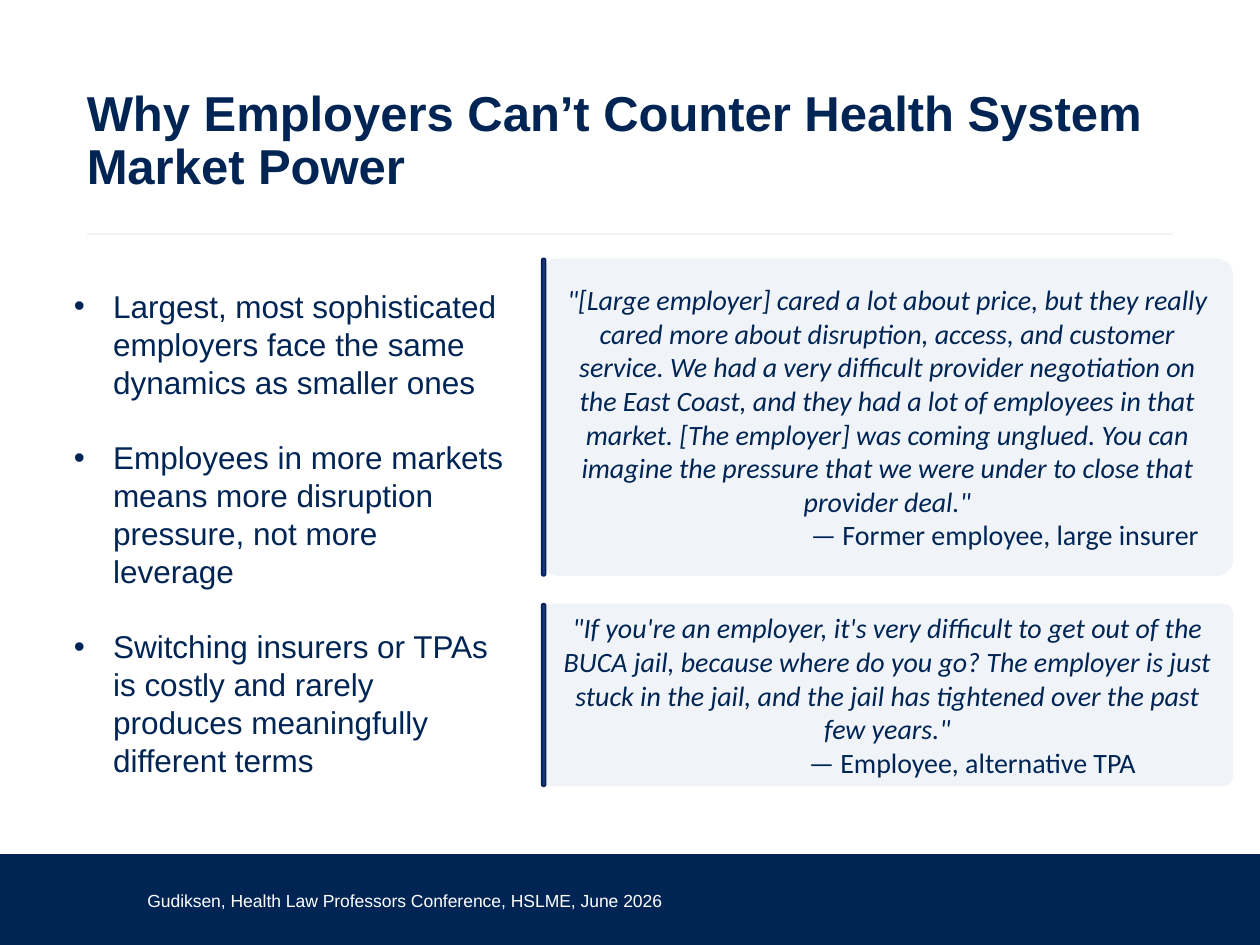
from lxml.etree import SubElement
from pptx import Presentation
from pptx.dml.color import RGBColor
from pptx.enum.shapes import MSO_CONNECTOR, MSO_SHAPE
from pptx.enum.text import MSO_ANCHOR
from pptx.oxml.ns import qn
from pptx.util import Cm, Pt

NAVY = "002554"
PALE = "F0F4F9"

TITLE = "Why Employers Can’t Counter Health System Market Power"
FOOTER = "Gudiksen, Health Law Professors Conference, HSLME, June 2026"
REASONS = [
    "Largest, most sophisticated employers face the same dynamics as smaller ones",
    "Employees in more markets means more disruption pressure, not more leverage",
    "Switching insurers or TPAs is costly and rarely produces meaningfully different terms",
]
QUOTES = [
    ('"[Large employer] cared a lot about price, but they really cared more about '
     "disruption, access, and customer service. We had a very difficult provider "
     "negotiation on the East Coast, and they had a lot of employees in that market. "
     "[The employer] was coming unglued. You can imagine the pressure that we were "
     'under to close that provider deal."',
     "— Former employee, large insurer", 5.21, 6.4),
    ('"If you\'re an employer, it\'s very difficult to get out of the BUCA jail, '
     "because where do you go? The employer is just stuck in the jail, and the jail "
     'has tightened over the past few years."',
     "— Employee, alternative TPA", 12.17, 3.68),
]


def color(hex_value):
    return RGBColor.from_string(hex_value)


def style(paragraph, size, hex_value=NAVY, name="Arial", bold=False, italic=False):
    font = paragraph.font
    font.name, font.size = name, Pt(size)
    font.bold, font.italic = bold, italic
    font.color.rgb = color(hex_value)


def indent(paragraph, left, first=0):
    properties = paragraph._p.get_or_add_pPr()
    properties.set("marL", str(Cm(left)))
    properties.set("indent", str(Cm(first)))
    return properties


def add_block(slide, kind, left, top, width, height, fill):
    block = slide.shapes.add_shape(kind, Cm(left), Cm(top), Cm(width), Cm(height))
    block.shadow.inherit = False
    block.fill.solid()
    block.fill.fore_color.rgb = color(fill)
    block.line.fill.background()
    return block


def add_text_frame(slide, left, top, width, height):
    box = slide.shapes.add_textbox(Cm(left), Cm(top), Cm(width), Cm(height))
    frame = box.text_frame
    frame.word_wrap = True
    frame.vertical_anchor = MSO_ANCHOR.MIDDLE
    return frame


def add_heading(slide, left, top, width, height):
    """Title with a faint rule along the bottom of its box."""
    frame = add_text_frame(slide, left, top, width, height)
    frame.margin_left = frame.margin_right = 0
    title = frame.paragraphs[0]
    title.text = TITLE
    title.line_spacing = 0.9
    style(title, 28, bold=True)

    bottom = Cm(top + height)
    rule = slide.shapes.add_connector(
        MSO_CONNECTOR.STRAIGHT, Cm(left), bottom, Cm(left + width), bottom)
    rule.line.color.rgb = color(PALE)
    rule.line.width = Pt(1)
    SubElement(rule._element.spPr, qn("a:effectLst"))


def add_reasons(slide, left, top, width, height):
    frame = add_text_frame(slide, left, top, width, height)
    for index, reason in enumerate(REASONS):
        paragraph = frame.add_paragraph() if index else frame.paragraphs[0]
        paragraph.text = reason
        if index:
            paragraph.space_before = Pt(21.6)
        properties = indent(paragraph, 0.79, -0.79)
        SubElement(properties, qn("a:buFont")).set("typeface", "Arial")
        SubElement(properties, qn("a:buChar")).set("char", "•")
        style(paragraph, 18)


def add_quote(slide, quote, speaker, left, top, width, height):
    """Pale card with a dark bar on its left edge."""
    card = add_block(slide, MSO_SHAPE.ROUNDED_RECTANGLE, left, top, width, height, PALE)
    card.adjustments[0] = 0.052
    frame = card.text_frame
    frame.word_wrap = True
    frame.vertical_anchor = MSO_ANCHOR.MIDDLE
    words, credit = frame.paragraphs[0], frame.add_paragraph()
    words.text, credit.text = quote, speaker
    indent(words, 0)
    indent(credit, 5.08)
    style(words, 16, name="Calibri", italic=True)
    style(credit, 16, name="Calibri")

    bar = add_block(slide, MSO_SHAPE.ROUNDED_RECTANGLE, left, top, 0.08, height, "203864")
    bar.adjustments[0] = 0.5
    bar.line.color.rgb = color("002060")
    bar.line.width = Pt(1)


def add_footer(slide, left, top, width, height):
    add_block(slide, MSO_SHAPE.RECTANGLE, left, top, width, height, NAVY)
    frame = add_text_frame(slide, left + 2.72, top + 0.43, 13.94, 1.02)
    frame.paragraphs[0].text = FOOTER
    style(frame.paragraphs[0], 10, "FFFFFF")


def main():
    deck = Presentation()
    deck.slide_width, deck.slide_height = Cm(25.4), Cm(19.05)
    slide = deck.slides.add_slide(deck.slide_layouts[6])
    add_footer(slide, 0, 17.22, 25.4, 1.83)
    add_heading(slide, 1.75, 1.02, 21.9, 3.69)
    add_reasons(slide, 1.24, 5.61, 9.17, 10.26)
    for quote, speaker, top, height in QUOTES:
        add_quote(slide, quote, speaker, 10.92, top, 13.94, height)
    deck.save("out.pptx")


if __name__ == "__main__":
    main()
